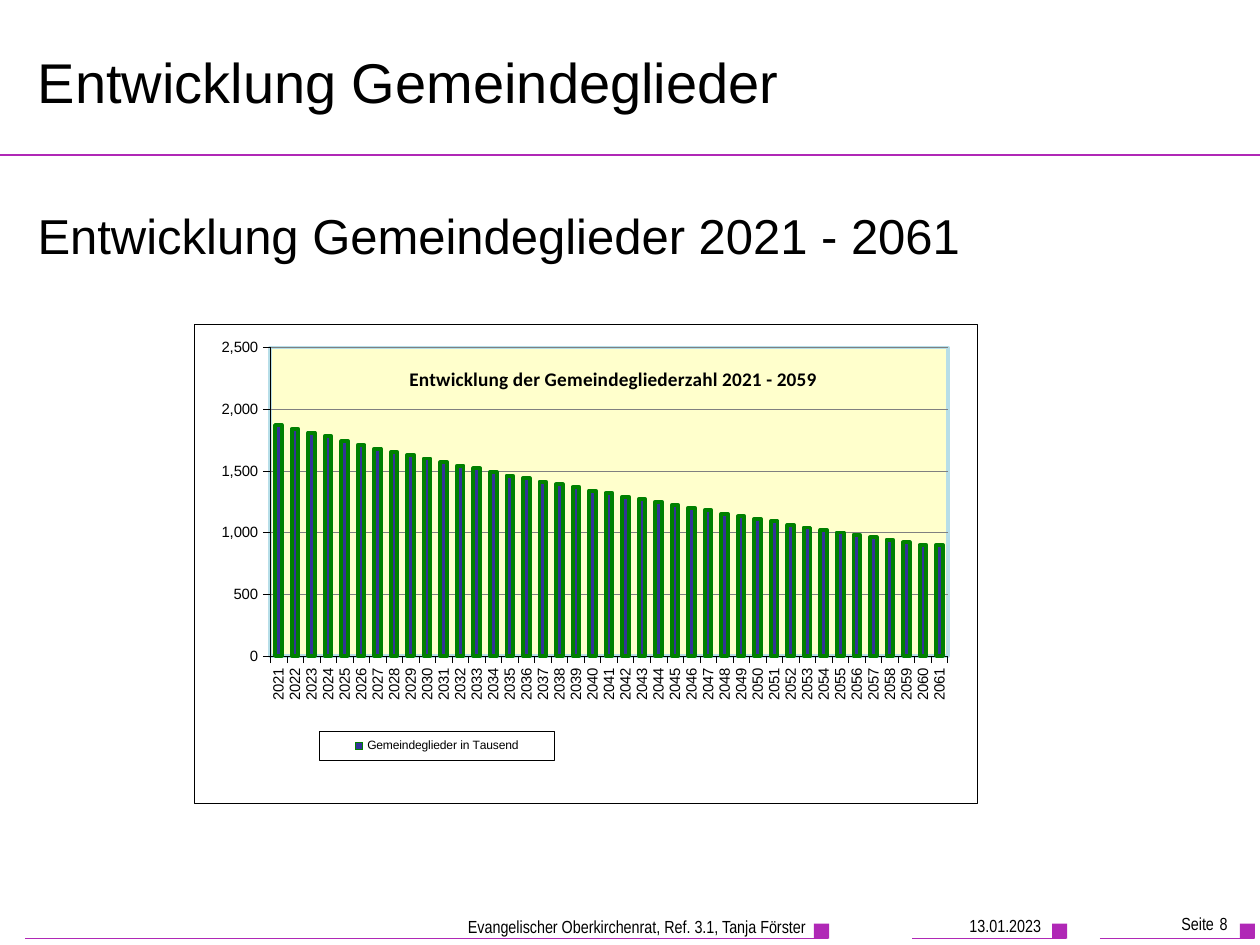
import lxml.etree
import pptx
import pptx.chart.data
import pptx.dml.color
import pptx.enum.chart
import pptx.enum.shapes
import pptx.enum.text
import pptx.oxml.ns
import pptx.oxml.xmlchemy
import pptx.util

Inches = pptx.util.Inches
Pt = pptx.util.Pt
qn = pptx.oxml.ns.qn
new_element = pptx.oxml.xmlchemy.OxmlElement
ALIGN = pptx.enum.text.PP_ALIGN
PURPLE = "B028B6"
MEMBERS = [
    1870, 1840, 1810, 1780, 1740, 1710, 1680, 1650, 1630, 1600, 1570, 1540, 1520, 1490,
    1460, 1440, 1410, 1390, 1370, 1340, 1320, 1290, 1270, 1250, 1220, 1200, 1180, 1150,
    1130, 1110, 1090, 1060, 1040, 1020, 1000, 980, 960, 940, 920, 900, 900,
]


def color(value):
    """Return the colour for a hex string."""
    return pptx.dml.color.RGBColor.from_string(value)


def style_font(font, size, name="Arial", **extra):
    """Set size, typeface and further values on a font, in black."""
    for key, value in {"size": Pt(size), "name": name, **extra}.items():
        setattr(font, key, value)
    font.color.rgb = color("000000")


def style_line(line, value, width):
    """Set the colour and width of a line."""
    line.color.rgb = color(value)
    line.width = Pt(width)


def add_rule(page, start, end, y, width):
    """Draw a horizontal purple line."""
    rule = page.shapes.add_connector(
        pptx.enum.shapes.MSO_CONNECTOR.STRAIGHT, Inches(start), Inches(y), Inches(end), Inches(y)
    )
    style_line(rule.line, PURPLE, width)
    lxml.etree.SubElement(rule._element.spPr, qn("a:effectLst"))


def add_footer_mark(page, start, end):
    """Draw a footer line with the square at its right end."""
    add_rule(page, start, end, 7.45, 0.75)
    square = page.shapes.add_shape(
        pptx.enum.shapes.MSO_SHAPE.RECTANGLE,
        Inches(end - 0.11), Inches(7.33), Inches(0.12), Inches(0.12),
    )
    square.shadow.inherit = False
    square.fill.solid()
    square.fill.fore_color.rgb = color(PURPLE)
    square.line.fill.background()


def add_text(page, place, spans, name, align):
    """Add a one-paragraph text box from (text, size) spans."""
    box = page.shapes.add_textbox(*map(Inches, place))
    box.text_frame.word_wrap = True
    para = box.text_frame.paragraphs[0]
    para.alignment = align
    for text, size in spans:
        span = para.add_run()
        span.text = text
        style_font(span.font, size, name)


def fill_title(page, text):
    """Place and format the title placeholder."""
    title = page.shapes.title
    place = {"left": 0.2, "top": 0.21, "width": 7.88, "height": 0.87}
    for key, value in place.items():
        setattr(title, key, Inches(value))
    title.text_frame.text = text
    title.text_frame.vertical_anchor = pptx.enum.text.MSO_ANCHOR.MIDDLE
    para = title.text_frame.paragraphs[0]
    para.alignment = ALIGN.LEFT
    style_font(para.runs[0].font, 32)


def set_layout(element, index, inner=False, **fractions):
    """Give a chart part a manual layout in fractions of the chart."""
    for old in element.findall(qn("c:layout")):
        element.remove(old)
    layout = new_element("c:layout")
    manual = lxml.etree.SubElement(layout, qn("c:manualLayout"))
    values = {"layoutTarget": "inner"} if inner else {}
    values.update(xMode="edge", yMode="edge", **fractions)
    for tag, value in values.items():
        lxml.etree.SubElement(manual, qn("c:" + tag)).set("val", str(value))
    element.insert(index, layout)


def frame_properties(fill, line, width):
    """Return chart shape properties with a fill and a border."""
    properties = new_element("c:spPr")
    border = new_element("a:ln")
    border.set("w", str(int(Pt(width))))
    for parent, value in ((properties, fill), (border, line)):
        solid = lxml.etree.SubElement(parent, qn("a:solidFill"))
        lxml.etree.SubElement(solid, qn("a:srgbClr")).set("val", value)
    properties.append(border)
    return properties


def style_axes(chart):
    """Format both axes and the gridlines."""
    for axis in (chart.category_axis, chart.value_axis):
        axis.major_tick_mark = pptx.enum.chart.XL_TICK_MARK.OUTSIDE
        style_font(axis.tick_labels.font, 8.5)
        style_line(axis.format.line, "000000", 0.25)
    labels = chart.category_axis._element.find(qn("c:txPr"))
    labels.find(qn("a:bodyPr")).set("rot", "-5400000")
    scale = {"minimum_scale": 0, "maximum_scale": 2500, "major_unit": 500}
    for key, value in scale.items():
        setattr(chart.value_axis, key, value)
    chart.value_axis.tick_labels.number_format = "#,##0"
    chart.value_axis.tick_labels.number_format_is_linked = False
    style_line(chart.value_axis.major_gridlines.format.line, "808080", 0.25)


def style_title(chart, text):
    """Lay the chart title over the plot area."""
    chart.chart_title.text_frame.text = text
    style_font(chart.chart_title.text_frame.paragraphs[0].runs[0].font, 11, "Calibri", bold=True)
    title = chart.chart_title._element
    set_layout(title, 1, x=0.27, y=0.08)
    title.find(qn("c:overlay")).set("val", "1")


def style_legend(chart):
    """Place the framed legend below the plot area."""
    chart.has_legend = True
    chart.legend.position = pptx.enum.chart.XL_LEGEND_POSITION.RIGHT
    chart.legend.include_in_layout = False
    style_font(chart.legend.font, 6.9)
    legend = chart.legend._element
    set_layout(legend, 1, x=0.16, y=0.85, w=0.3, h=0.06)
    legend.find(qn("c:overlay")).addnext(frame_properties("FFFFFF", "000000", 0.25))


def add_member_chart(page):
    """Add the column chart of parish members by year."""
    data = pptx.chart.data.CategoryChartData(number_format="#,##0")
    data.categories = [str(2021 + index) for index in range(len(MEMBERS))]
    data.add_series("Gemeindeglieder in Tausend", MEMBERS)
    chart = page.shapes.add_chart(
        pptx.enum.chart.XL_CHART_TYPE.COLUMN_CLUSTERED,
        Inches(1.54), Inches(2.57), Inches(6.22), Inches(3.81), data,
    ).chart
    style_font(chart.font, 10, "Times New Roman")
    style_axes(chart)
    style_title(chart, "Entwicklung der Gemeindegliederzahl 2021 - 2059")
    style_legend(chart)
    plot = chart.plots[0]
    plot.gap_width = 150
    plot.vary_by_categories = False
    columns = plot.series[0].format
    columns.fill.solid()
    columns.fill.fore_color.rgb = color("333399")
    style_line(columns.line, "008000", 2.25)
    body = chart._chartSpace.find(qn("c:chart"))
    body.addnext(frame_properties("FFFFFF", "000000", 0.25))
    area = body.find(qn("c:plotArea"))
    set_layout(area, 0, inner=True, x=0.097, y=0.049, w=0.865, h=0.643)
    area.append(frame_properties("FFFFCC", "B7DEE8", 2.25))


def main():
    """Build the slide and save it."""
    deck = pptx.Presentation()
    deck.slide_width, deck.slide_height = Inches(10), Inches(7.5)
    page = deck.slides.add_slide(deck.slide_layouts[5])
    for start, end in ((0.2, 6.57), (7.24, 8.46), (8.73, 9.95)):
        add_footer_mark(page, start, end)
    add_rule(page, 0, 10, 1.23, 1.5)
    fill_title(page, "Entwicklung Gemeindeglieder")
    heading = [("Entwicklung Gemeindeglieder 2021 - 2061", 28)]
    add_text(page, (0.2, 1.58, 9.53, 5.4), heading, "Arial", ALIGN.LEFT)
    footers = (
        ((6.89, 7.21, 1.47, 0.24), [("13.01.2023", 10)]),
        ((0.35, 7.22, 6.14, 0.16), [("Evangelischer Oberkirchenrat, Ref. 3.1, Tanja Förster", 10)]),
        ((8.62, 7.14, 1.22, 0.24), [("Seite", 10), (" ", 14), ("8", 10)]),
    )
    for place, spans in footers:
        add_text(page, place, spans, "Arial Narrow", ALIGN.RIGHT)
    add_member_chart(page)
    deck.save("out.pptx")


if __name__ == "__main__":
    main()
